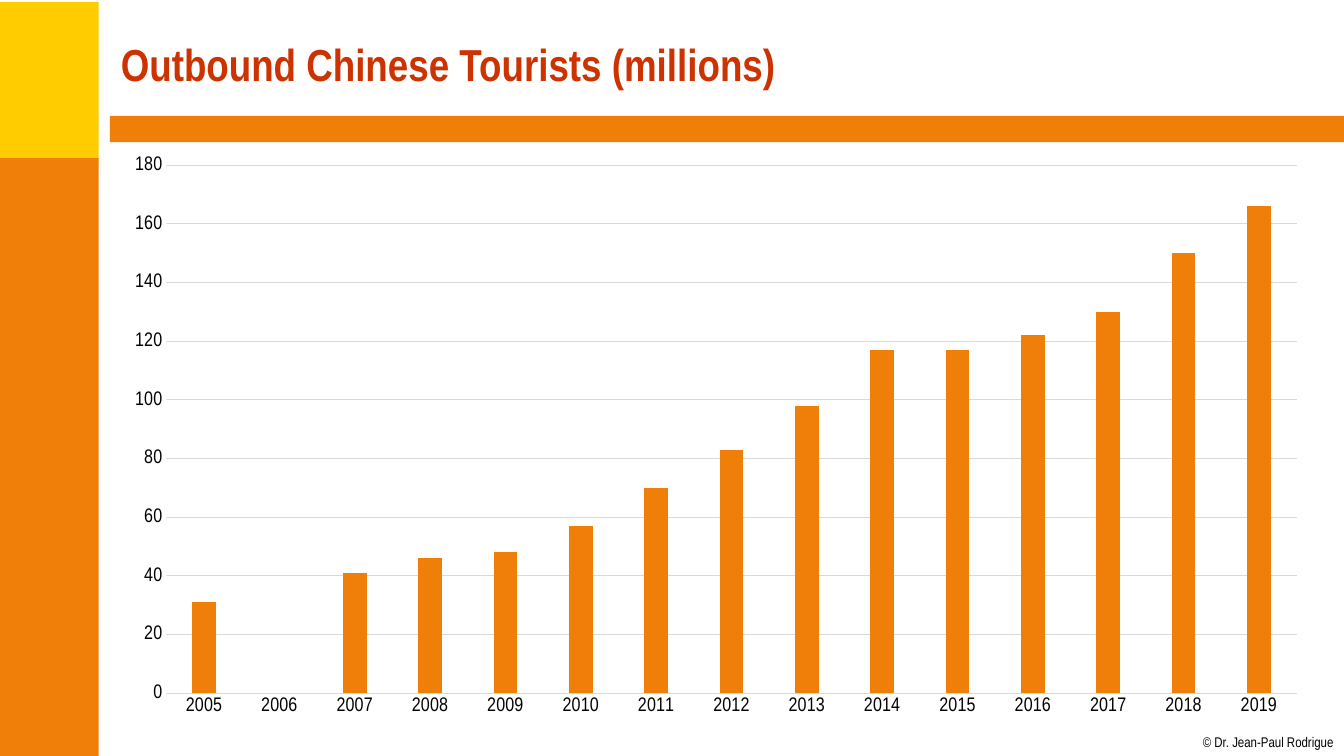
from pptx import Presentation
from pptx.chart.data import CategoryChartData
from pptx.dml.color import RGBColor
from pptx.enum.chart import XL_CHART_TYPE, XL_TICK_MARK
from pptx.enum.shapes import MSO_SHAPE
from pptx.enum.text import MSO_ANCHOR, PP_ALIGN
from pptx.util import Inches, Pt

THEME = {
    "font": "Arial Narrow",
    "orange": RGBColor(0xF0, 0x7F, 0x09),
    "yellow": RGBColor(0xFF, 0xCC, 0x00),
    "red": RGBColor(0xCC, 0x33, 0x00),
    "black": RGBColor(0, 0, 0),
    "grid": RGBColor(0xD9, 0xD9, 0xD9),
    "title_size": Pt(32),
    "chart_size": Pt(14),
    "credit_size": Pt(10),
    "line_width": Pt(0.75),
}

deck = Presentation()
deck.slide_width = Inches(13.33)
deck.slide_height = Inches(7.5)
page = deck.slides.add_slide(deck.slide_layouts[6])


def add_text(text, left, top, width, height, size, color, bold=False,
             align=PP_ALIGN.LEFT, margin=(0.1, 0.05), wrap=True):
    box = page.shapes.add_textbox(Inches(left), Inches(top), Inches(width), Inches(height))
    frame = box.text_frame
    frame.word_wrap = wrap
    frame.vertical_anchor = MSO_ANCHOR.MIDDLE
    frame.margin_left = frame.margin_right = Inches(margin[0])
    frame.margin_top = frame.margin_bottom = Inches(margin[1])
    para = frame.paragraphs[0]
    para.alignment = align
    span = para.add_run()
    span.text = text
    span.font.name = THEME["font"]
    span.font.size = size
    span.font.bold = bold
    span.font.color.rgb = color


bands = [
    (-0.02, 0.02, 1, 1.58, "yellow"),
    (-0.02, 1.57, 1, 5.93, "orange"),
    (1.09, 1.15, 12.24, 0.26, "orange"),
]
for left, top, width, height, color in bands:
    band = page.shapes.add_shape(
        MSO_SHAPE.RECTANGLE, Inches(left), Inches(top), Inches(width), Inches(height))
    band.shadow.inherit = False
    band.fill.solid()
    band.fill.fore_color.rgb = THEME[color]
    band.line.fill.background()

add_text("© Dr. Jean-Paul Rodrigue", 11.93, 7.28, 1.31, 0.17, THEME["credit_size"],
         THEME["black"], margin=(0, 0), wrap=False)
add_text("Outbound Chinese Tourists (millions)", 1.1, 0.11, 12, 1.04,
         THEME["title_size"], THEME["red"], bold=True)

tourists = CategoryChartData()
tourists.categories = [str(year) for year in range(2005, 2020)]
tourists.add_series("Series 1", [31, None, 41, 46, 48, 57, 70, 83, 98, 117, 117, 122, 130, 150, 166])
chart = page.shapes.add_chart(
    XL_CHART_TYPE.COLUMN_CLUSTERED, Inches(1.1), Inches(1.43), Inches(12), Inches(5.79),
    tourists).chart
chart.has_legend = False
chart.has_title = False
chart.font.name = THEME["font"]
chart.font.size = THEME["chart_size"]
chart.font.color.rgb = THEME["black"]

plot = chart.plots[0]
plot.gap_width = 219
plot.overlap = -27
plot.vary_by_categories = False
columns = plot.series[0]
columns.invert_if_negative = False
columns.format.fill.solid()
columns.format.fill.fore_color.rgb = THEME["orange"]

years, millions = chart.category_axis, chart.value_axis
for axis in (years, millions):
    axis.major_tick_mark = XL_TICK_MARK.NONE
    axis.minor_tick_mark = XL_TICK_MARK.NONE
millions.minimum_scale = 0
millions.maximum_scale = 180
millions.major_unit = 20
millions.has_major_gridlines = True
millions.format.line.fill.background()
for line in (years.format.line, millions.major_gridlines.format.line):
    line.color.rgb = THEME["grid"]
    line.width = THEME["line_width"]

deck.save("out.pptx")
